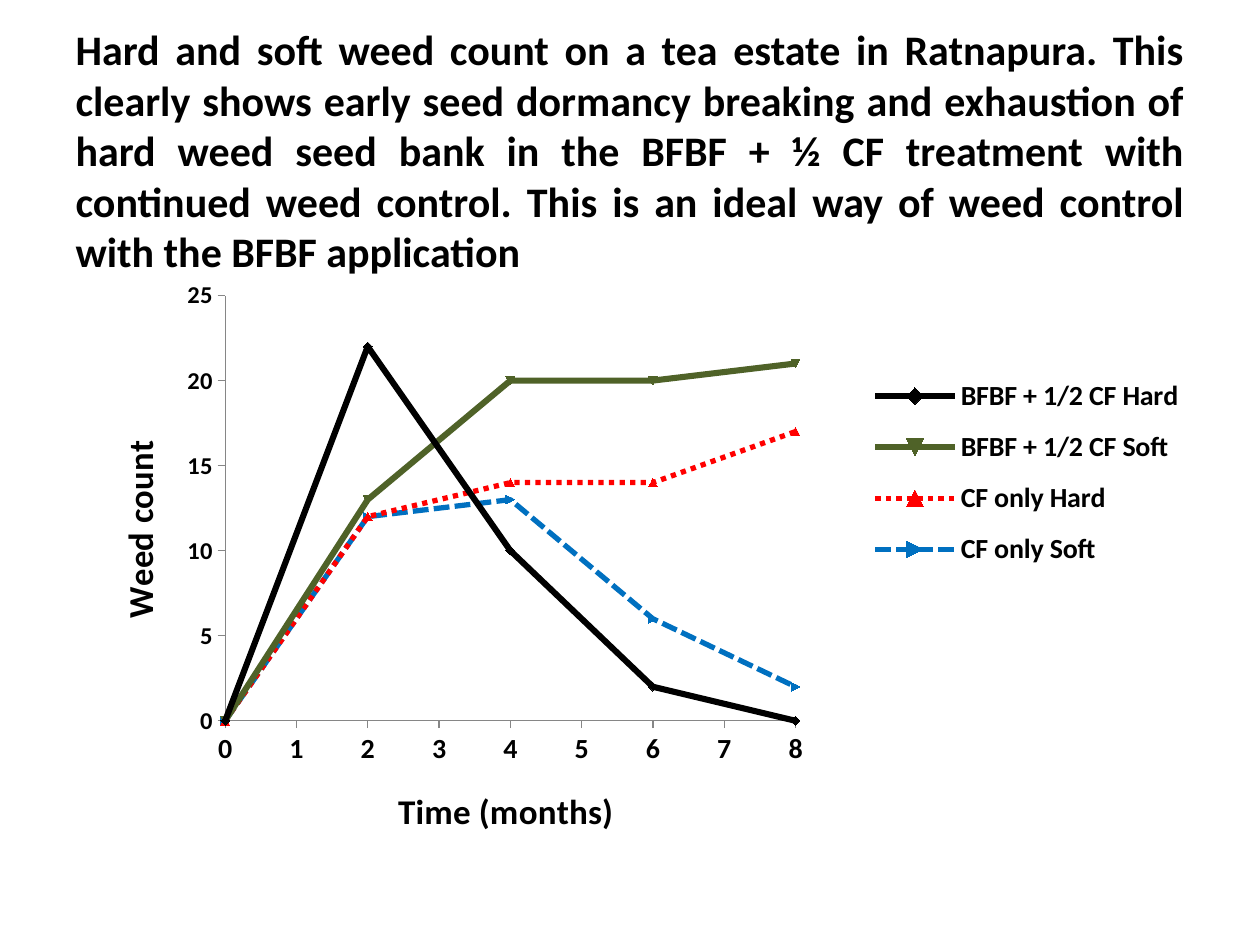
from lxml import etree
from pptx import Presentation
from pptx import util as u
from pptx.chart.data import XyChartData
from pptx.dml.color import RGBColor
from pptx.enum import chart as ch, dml, text
from pptx.oxml.ns import qn

FONT = "Calibri"
BLACK = RGBColor(0x00, 0x00, 0x00)
OLIVE = RGBColor(0x4F, 0x62, 0x28)
RED = RGBColor(0xFF, 0x00, 0x00)
BLUE = RGBColor(0x00, 0x70, 0xC0)
GRAY = RGBColor(0x86, 0x86, 0x86)

TITLE = (
    "Hard and soft weed count on a tea estate in Ratnapura. This clearly shows "
    "early seed dormancy breaking and exhaustion of hard weed seed bank in the "
    "BFBF + ½ CF treatment with continued weed control. This is an ideal way of "
    "weed control with the BFBF application"
)
MONTHS = (0, 2, 4, 6, 8)
# name, weed counts, colour, line width, dash
TREATMENTS = (
    ("BFBF + 1/2 CF Hard", (0, 22, 10, 2, 0), BLACK, 3.5, None),
    ("BFBF + 1/2 CF Soft", (0, 13, 20, 20, 21), OLIVE, 3.5, None),
    ("CF only Hard", (0, 12, 14, 14, 17), RED, 3, dml.MSO_LINE.ROUND_DOT),
    ("CF only Soft", (0, 12, 13, 6, 2), BLUE, 3, dml.MSO_LINE.SQUARE_DOT),
)


def format_font(font, size, bold=True):
    font.name = FONT
    font.size = u.Pt(size)
    font.bold = bold
    font.color.rgb = BLACK


def set_layout(element, after=None, inner=False, **fractions):
    """Place a chart part by fractions of the chart area."""
    for old_layout in element.findall(qn("c:layout")):
        element.remove(old_layout)
    layout = etree.Element(qn("c:layout"))
    manual = etree.SubElement(layout, qn("c:manualLayout"))
    if inner:
        etree.SubElement(manual, qn("c:layoutTarget")).set("val", "inner")
    for tag in ("xMode", "yMode"):
        etree.SubElement(manual, qn("c:" + tag)).set("val", "edge")
    for tag, value in fractions.items():
        etree.SubElement(manual, qn("c:" + tag)).set("val", str(value))
    if after is None:
        element.insert(0, layout)
    else:
        element.find(qn(after)).addnext(layout)


def add_title(slide):
    title = slide.shapes.title
    title.left, title.top = u.Inches(0.5), u.Inches(0.3)
    title.width, title.height = u.Inches(9), u.Inches(1.78)
    frame = title.text_frame
    frame.word_wrap = True
    frame.auto_size = text.MSO_AUTO_SIZE.NONE
    frame.vertical_anchor = text.MSO_ANCHOR.MIDDLE
    paragraph = frame.paragraphs[0]
    paragraph.alignment = text.PP_ALIGN.JUSTIFY
    run = paragraph.add_run()
    run.text = TITLE
    format_font(run.font, 24)


def format_axis(axis, caption, label_size, maximum, step, x, y, rotation=0):
    axis.has_major_gridlines = False
    axis.major_tick_mark = ch.XL_TICK_MARK.OUTSIDE
    axis.minor_tick_mark = ch.XL_TICK_MARK.NONE
    axis.minimum_scale, axis.maximum_scale = 0, maximum
    axis.major_unit = step
    axis.format.line.color.rgb = GRAY
    axis.format.line.width = u.Pt(0.75)
    format_font(axis.tick_labels.font, label_size)

    frame = axis.axis_title.text_frame
    run = frame.paragraphs[0].add_run()
    run.text = caption
    format_font(run.font, 20)
    title_element = axis.axis_title._element
    body = title_element.find(".//" + qn("a:bodyPr"))
    body.set("rot", str(rotation * 60000))
    body.set("vert", "horz")
    set_layout(title_element, after="c:tx", x=x, y=y)


def format_series(series, color, width, dash):
    series.smooth = False
    line = series.format.line
    line.color.rgb = color
    line.width = u.Pt(width)
    if dash is not None:
        line.dash_style = dash
    marker = series.marker
    marker.style = ch.XL_MARKER_STYLE.AUTOMATIC
    marker.size = 5
    marker.format.fill.solid()
    marker.format.fill.fore_color.rgb = color
    marker.format.line.color.rgb = color


def add_weed_chart(slide):
    data = XyChartData()
    for name, counts, *_ in TREATMENTS:
        series = data.add_series(name)
        for month, count in zip(MONTHS, counts):
            series.add_data_point(month, count)
    chart = slide.shapes.add_chart(
        ch.XL_CHART_TYPE.XY_SCATTER_LINES,
        u.Inches(0.5), u.Inches(1.75), u.Inches(9), u.Inches(4.95), data,
    ).chart
    chart.has_title = False
    format_font(chart.font, 10, bold=False)

    # Lines and markers
    plot = chart.plots[0]
    plot.vary_by_categories = False
    for series, (_, _, *style) in zip(plot.series, TREATMENTS):
        format_series(series, *style)

    # Axes
    format_axis(chart.category_axis, "Time (months)", 16, 8, 1, 0.29, 0.91)
    format_axis(chart.value_axis, "Weed count", 14, 25, 5, 0.04, 0.35, rotation=-90)

    # Legend and plot area
    chart.has_legend = True
    legend = chart.legend
    legend.position = ch.XL_LEGEND_POSITION.RIGHT
    legend.include_in_layout = False
    format_font(legend.font, 16)
    set_layout(legend._element, after="c:legendPos", x=0.71, y=0.23, w=0.28, h=0.36)
    plot_area = chart._chartSpace.find(".//" + qn("c:plotArea"))
    set_layout(plot_area, inner=True, x=0.143, y=0.122, w=0.503, h=0.691)


def main():
    presentation = Presentation()
    presentation.slide_width = u.Inches(10)
    presentation.slide_height = u.Inches(7.5)
    slide = presentation.slides.add_slide(presentation.slide_layouts[5])
    add_title(slide)
    add_weed_chart(slide)
    presentation.save("out.pptx")


if __name__ == "__main__":
    main()
